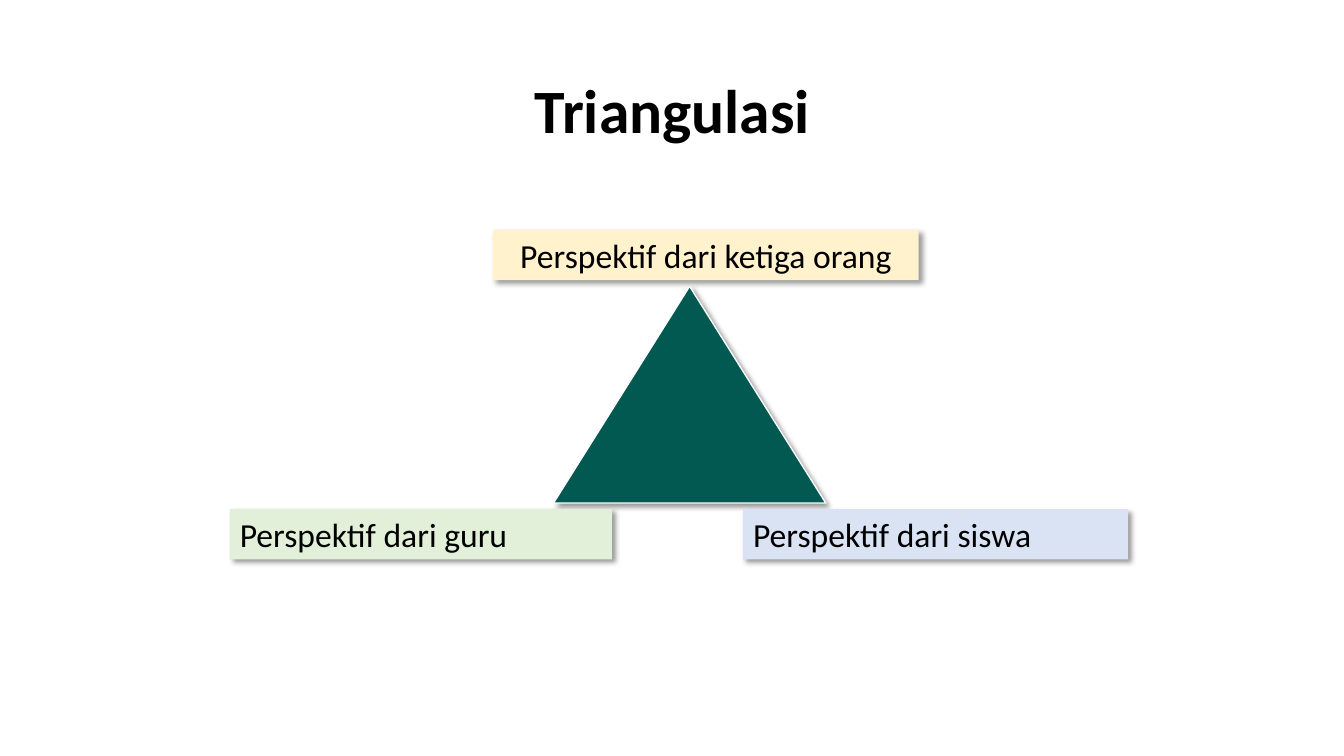
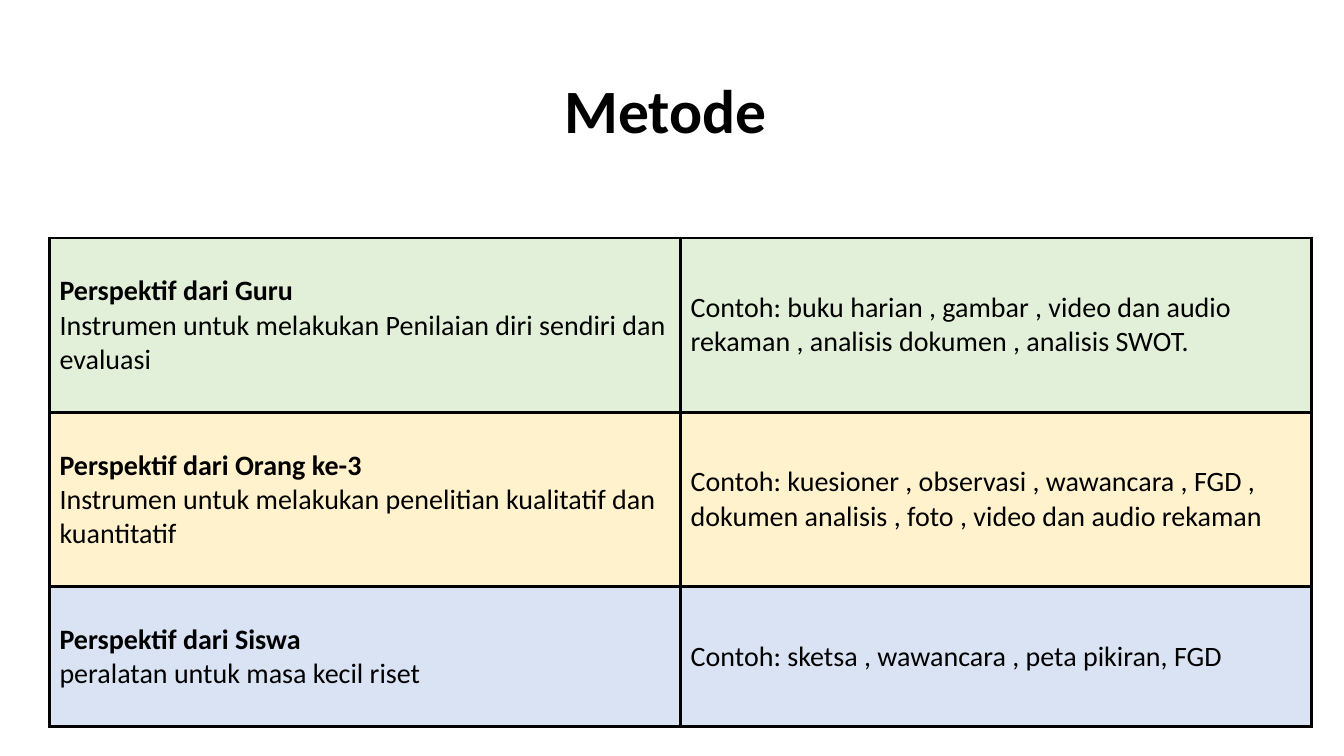
from dataclasses import dataclass

import pptx
import pptx.dml.color
import pptx.enum.shapes
import pptx.enum.text
import pptx.oxml
import pptx.oxml.ns
import pptx.util

EMU_PER_PX = 9144  # 100 px to the inch
FONT = "Calibri"
COLORS = {
    "text": "000000",
    "border": "000000",
    "outline": "FFFFFF",
    "triangle": "025952",
    "teacher": "E2F0D9",
    "third": "FFF2CC",
    "student": "DAE3F3",
}
ALIGN = pptx.enum.text.PP_ALIGN
ANCHOR = pptx.enum.text.MSO_ANCHOR
SHAPE = pptx.enum.shapes.MSO_SHAPE
TITLE_ONLY = 5
BORDER_POINTS = 2.21
NAMESPACE = pptx.oxml.ns.nsdecls("a")


@dataclass(frozen=True)
class Box:
    left: int
    top: int
    width: int
    height: int

    def emu(self) -> list[pptx.util.Emu]:
        return [px(n) for n in (self.left, self.top, self.width, self.height)]


@dataclass(frozen=True)
class Label:
    text: str
    box: Box
    color: str
    align: ALIGN = ALIGN.LEFT


@dataclass(frozen=True)
class Method:
    heading: str
    purpose: str
    examples: str
    color: str
    height: int


TITLE_BOX = Box(92, 40, 1150, 145)
TRIANGLE_BOX = Box(549, 284, 270, 215)
TABLE_BOX = Box(49, 236, 1252, 485)
LABELS = [
    Label("Perspektif dari guru", Box(228, 505, 379, 50), "teacher"),
    Label("Perspektif dari siswa", Box(737, 505, 382, 50), "student"),
    Label("Perspektif dari ketiga orang", Box(489, 228, 422, 50), "third", ALIGN.CENTER),
]
METHODS = [
    Method(
        "Perspektif dari Guru",
        "Instrumen untuk melakukan Penilaian diri sendiri dan evaluasi",
        "Contoh: buku harian , gambar , video dan audio rekaman , "
        "analisis dokumen , analisis SWOT.",
        "teacher", 173,
    ),
    Method(
        "Perspektif dari Orang ke-3",
        "Instrumen untuk melakukan penelitian kualitatif dan kuantitatif",
        "Contoh: kuesioner , observasi , wawancara , FGD , "
        "dokumen analisis , foto , video dan audio rekaman",
        "third", 173,
    ),
    Method(
        "Perspektif dari Siswa",
        "peralatan untuk masa kecil riset",
        "Contoh: sketsa , wawancara , peta pikiran, FGD",
        "student", 139,
    ),
]


def px(length: int) -> pptx.util.Emu:
    return pptx.util.Emu(length * EMU_PER_PX)


def rgb(name: str) -> pptx.dml.color.RGBColor:
    return pptx.dml.color.RGBColor.from_string(COLORS[name])


def write(para, text: str, *, size: int, bold: bool = False,
          align: ALIGN = ALIGN.LEFT, spacing: float = 1.0) -> None:
    """Put one formatted span of text into a paragraph."""
    para.alignment = align
    para.line_spacing = spacing
    span = para.add_run()
    span.text = text
    span.font.name = FONT
    span.font.size = pptx.util.Pt(size)
    span.font.bold = bold
    span.font.color.rgb = rgb("text")


def add_page(deck, title: str):
    """Add a slide with the shared title style."""
    page = deck.slides.add_slide(deck.slide_layouts[TITLE_ONLY])
    holder = page.shapes.title
    holder.left, holder.top, holder.width, holder.height = TITLE_BOX.emu()
    holder.text_frame.vertical_anchor = ANCHOR.MIDDLE
    write(holder.text_frame.paragraphs[0], title, size=44, bold=True,
          align=ALIGN.CENTER, spacing=0.9)
    return page


def add_shadowed(shapes, kind: SHAPE, box: Box, color: str):
    """Add a filled shape with a soft shadow to the lower right."""
    shape = shapes.add_shape(kind, *box.emu())
    shape.fill.solid()
    shape.fill.fore_color.rgb = rgb(color)
    shape.line.fill.background()
    shape.shadow.inherit = False
    effects = shape._element.spPr.find(pptx.oxml.ns.qn("a:effectLst"))
    effects.append(pptx.oxml.parse_xml(
        f'<a:outerShdw {NAMESPACE} blurRad="50800" dist="38100" dir="2700000" '
        'algn="tl" rotWithShape="0"><a:srgbClr val="000000">'
        '<a:alpha val="40000"/></a:srgbClr></a:outerShdw>'))
    return shape


def add_label(shapes, label: Label) -> None:
    shape = add_shadowed(shapes, SHAPE.RECTANGLE, label.box, label.color)
    frame = shape.text_frame
    frame.word_wrap = True
    frame.vertical_anchor = ANCHOR.TOP
    write(frame.paragraphs[0], label.text, size=24, align=label.align)


def style_cell(cell, color: str) -> None:
    """Give a cell its four borders, then its fill."""
    properties = cell._tc.get_or_add_tcPr()
    width = pptx.util.Pt(BORDER_POINTS)
    for side in "LRTB":
        properties.append(pptx.oxml.parse_xml(
            f'<a:ln{side} {NAMESPACE} w="{width}"><a:solidFill>'
            f'<a:srgbClr val="{COLORS["border"]}"/></a:solidFill></a:ln{side}>'))
    cell.fill.solid()
    cell.fill.fore_color.rgb = rgb(color)


def add_triangulation(deck) -> None:
    page = add_page(deck, "Triangulasi")
    diagram = page.shapes.add_group_shape().shapes
    triangle = add_shadowed(diagram, SHAPE.ISOSCELES_TRIANGLE, TRIANGLE_BOX, "triangle")
    triangle.line.color.rgb = rgb("outline")
    triangle.line.width = pptx.util.Pt(1)
    for label in LABELS:
        add_label(diagram, label)


def add_methods(deck) -> None:
    page = add_page(deck, "Metode ")
    table = page.shapes.add_table(len(METHODS), 2, *TABLE_BOX.emu()).table
    table.first_row = table.horz_banding = False
    for row, method in zip(table.rows, METHODS):
        row.height = px(method.height)
        perspective, examples = row.cells
        for cell in (perspective, examples):
            style_cell(cell, method.color)
        # Perspective on the left, set down from the top border
        perspective.margin_top = px(36)
        frame = perspective.text_frame
        write(frame.paragraphs[0], method.heading, size=20, bold=True)
        write(frame.add_paragraph(), method.purpose, size=20)
        # Examples on the right
        examples.vertical_anchor = ANCHOR.MIDDLE
        write(examples.text_frame.paragraphs[0], method.examples, size=20)


def main() -> None:
    deck = pptx.Presentation()
    deck.slide_width, deck.slide_height = px(1333), px(750)
    add_triangulation(deck)
    add_methods(deck)
    deck.save("out.pptx")


if __name__ == "__main__":
    main()
